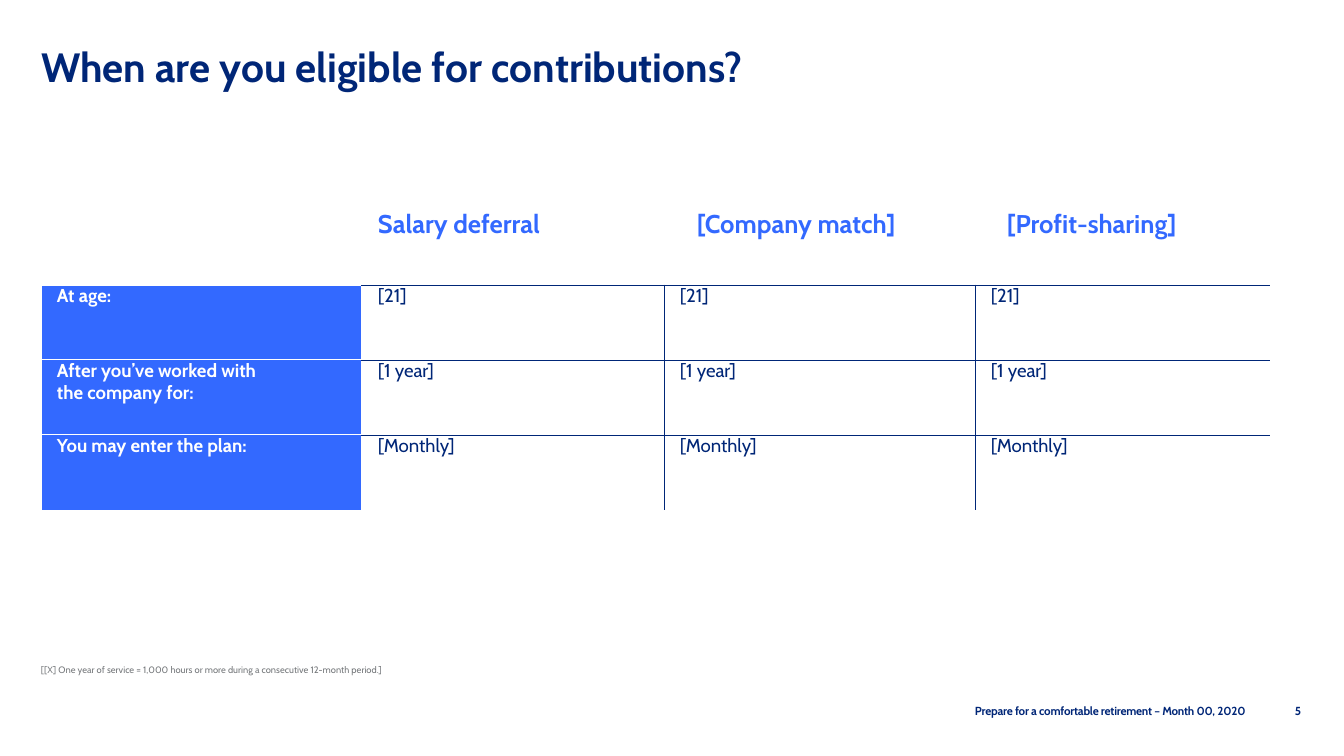
from lxml import etree
from pptx import Presentation
from pptx import util as u
from pptx.dml.color import RGBColor
from pptx.enum import text
from pptx.oxml import ns

NAVY = RGBColor(0x00, 0x26, 0x77)
BLUE = RGBColor(0x33, 0x69, 0xFF)
GRAY = RGBColor(0x75, 0x78, 0x7B)
WHITE = RGBColor(0xFF, 0xFF, 0xFF)
FONT = "Cabin"


def px(length):
    return u.Emu(round(length * 914400 / 84))


def style(para, size, color, bold):
    para.alignment = text.PP_ALIGN.LEFT
    para.font.name = FONT
    para.font.size = u.Pt(size)
    para.font.bold = bold
    para.font.color.rgb = color


deck = Presentation()
deck.slide_width, deck.slide_height = px(1344), px(756)
page = deck.slides.add_slide(deck.slide_layouts[5])

title = page.shapes.title
labels = [
    (title, (41, 42, 1262, 43), "When are you eligible for contributions?", 35, NAVY, True, 0),
    (None, (41, 664, 360, 12), "[[X] One year of service = 1,000 hours or more during a consecutive 12-month period.]", 8, GRAY, False, 0),
    (None, (975, 704, 300, 14), "Prepare for a comfortable retirement – Month 00, 2020", 10, NAVY, True, -17),
    (None, (1295, 704, 18, 14), "5", 10, NAVY, True, 0),
]
for box, place, words, size, color, bold, spacing in labels:
    left, top, width, height = map(px, place)
    if box is None:
        box = page.shapes.add_textbox(left, top, width, height)
    box.left, box.top, box.width, box.height = left, top, width, height
    frame = box.text_frame
    frame.margin_left = frame.margin_right = frame.margin_top = frame.margin_bottom = 0
    frame.auto_size = text.MSO_AUTO_SIZE.NONE
    frame.vertical_anchor = text.MSO_ANCHOR.TOP
    frame.word_wrap = True
    frame.text = words
    para = frame.paragraphs[0]
    style(para, size, color, bold)
    if spacing:
        para.runs[0].font._element.set("spc", str(spacing))

rows = [
    ["", "Salary deferral\t[Company match]\t[Profit-sharing]", "", ""],
    ["At age:"] + ["[21]"] * 3,
    ["After you’ve worked with the company for:"] + ["[1 year]"] * 3,
    ["You may enter the plan:"] + ["[Monthly]"] * 3,
]
widths = [321, 302, 311, 295]
heights = [76, 75, 75, 76]
table = page.shapes.add_table(4, 4, px(41), px(209), px(sum(widths)), px(sum(heights))).table
table.first_row = table.horz_banding = False
for column, width in zip(table.columns, widths):
    column.width = px(width)
for row, height in zip(table.rows, heights):
    row.height = px(height)
table.cell(0, 1).merge(table.cell(0, 3))

for r, row in enumerate(rows):
    for c, words in enumerate(row):
        cell = table.cell(r, c)
        cell.margin_left = px(16)
        cell.margin_right = px(80 if c == 0 else 0)
        cell.margin_top = cell.margin_bottom = 0
        cell.vertical_anchor = text.MSO_ANCHOR.TOP

        navy_edges = {
            "L": r > 0 and c > 1,
            "R": r > 0 and c in (1, 2),
            "T": r > 0 and c > 0,
            "B": r < 3 and c > 0,
        }
        properties = cell._tc.get_or_add_tcPr()
        for side, navy in navy_edges.items():
            line = etree.SubElement(properties, ns.qn(f"a:ln{side}"), w=str(u.Pt(0.5 if navy else 1)))
            fill = etree.SubElement(line, ns.qn("a:solidFill"))
            etree.SubElement(fill, ns.qn("a:srgbClr"), val=str(NAVY if navy else WHITE))

        is_label = r > 0 and c == 0
        if is_label:
            cell.fill.solid()
            cell.fill.fore_color.rgb = BLUE
        else:
            cell.fill.background()

        if words:
            cell.text = words
            para = cell.text_frame.paragraphs[0]
            if r == 0:
                tabs = etree.SubElement(para._p.get_or_add_pPr(), ns.qn("a:tabLst"))
                for stop in (319, 629):
                    etree.SubElement(tabs, ns.qn("a:tab"), pos=str(px(stop)), algn="l")
                style(para, 22, BLUE, True)
            else:
                style(para, 16, WHITE if is_label else NAVY, is_label)
                if is_label and r == 2:
                    para.line_spacing = u.Pt(19)

deck.save("out.pptx")
